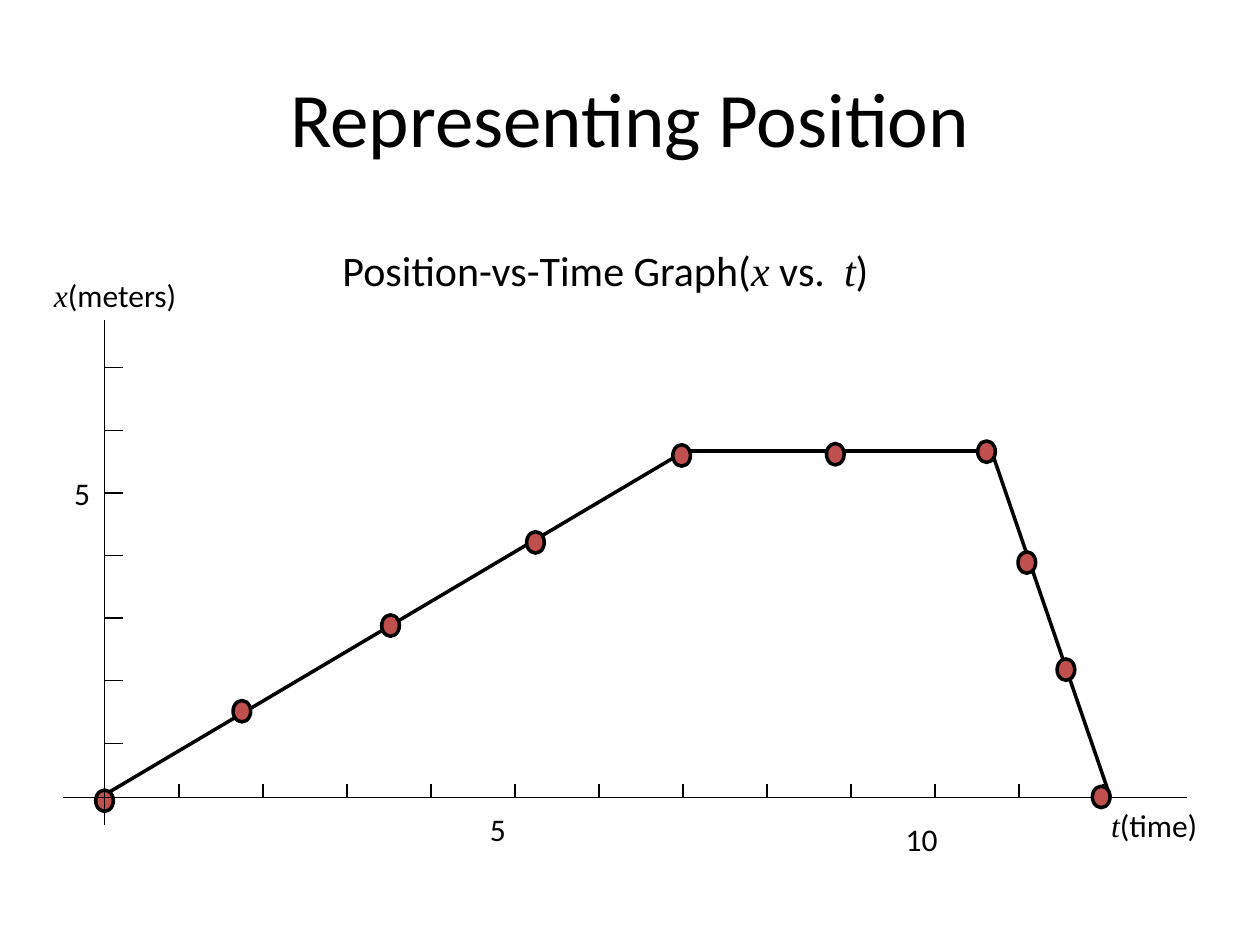
from typing import NamedTuple

from lxml import etree
from pptx import Presentation
from pptx import util as u
from pptx.dml.color import RGBColor
from pptx.enum import shapes, text
from pptx.oxml.ns import qn

COLORS = {"ink": "000000", "marker": "C0504D"}
SANS, SERIF = "Calibri", "Times New Roman"

AXIS_X, AXIS_Y = 0.83, 6.33
TIME_TICKS, TIME_START, TIME_STEP = 12, 1.42, 2 / 3
POSITION_TICKS, POSITION_START, POSITION_STEP = 7, 5.9, 0.497
TIME_TICK_LENGTH, POSITION_TICK_LENGTH = 0.11, 0.15
MARKER_WIDTH, MARKER_HEIGHT = 0.14, 0.17


class Segment(NamedTuple):
    x1: float
    y1: float
    x2: float
    y2: float
    weight: float = 0.75


class Marker(NamedTuple):
    left: float
    top: float


class Label(NamedTuple):
    """Text in pieces; each piece pairs its wording with whether it is a variable."""
    left: float
    top: float
    width: float
    height: float
    pieces: tuple[tuple[str, bool], ...]
    size: float = 18
    wrap: bool = False
    align: text.PP_ALIGN = text.PP_ALIGN.LEFT
    anchor: text.MSO_ANCHOR = text.MSO_ANCHOR.TOP
    space_before: float = 0


MOTION = [
    Segment(8.81, 6.32, 7.89, 3.64, 2),
    Segment(0.76, 6.35, 5.47, 3.56, 2),
    Segment(7.76, 3.58, 5.4, 3.58, 2),
]
AXES = [
    Segment(AXIS_X, 2.54, AXIS_X, 6.55),
    Segment(9.42, AXIS_Y, 0.5, AXIS_Y),
]
MARKERS_BEHIND_AXES = [
    Marker(0.76, 6.27), Marker(1.85, 5.56), Marker(5.34, 3.53), Marker(6.56, 3.52),
]
MARKERS_OVER_AXES = [
    Marker(3.03, 4.88), Marker(4.18, 4.22), Marker(7.76, 3.5),
    Marker(8.67, 6.24), Marker(8.39, 5.23), Marker(8.08, 4.38),
]
LABELS = [
    Label(0.5, 0.3, 9, 1.25, (("Representing Position", False),), 44, True,
          text.PP_ALIGN.CENTER, text.MSO_ANCHOR.MIDDLE),
    Label(2.62, 1.89, 6.5, 0.67,
          (("Position-vs-Time Graph(", False), ("x", True), (" vs.  ", False),
           ("t", True), (")", False)), 24, True, space_before=4.8),
    Label(8.72, 6.35, 0.91, 0.4, (("t", True), ("(time)", False))),
    Label(0.33, 2.14, 1.19, 0.4, (("x", True), ("(meters)", False))),
    Label(3.79, 6.38, 0.33, 0.4, (("5", False),)),
    Label(7.09, 6.46, 0.46, 0.4, (("10", False),)),
    Label(0.49, 3.71, 0.33, 0.4, (("5", False),)),
]


def color(name: str) -> RGBColor:
    return RGBColor.from_string(COLORS[name])


def draw_segment(slide, segment: Segment) -> None:
    ends = [u.Inches(length) for length in segment[:4]]
    line = slide.shapes.add_connector(shapes.MSO_CONNECTOR.STRAIGHT, *ends)
    line.line.color.rgb = color("ink")
    line.line.width = u.Pt(segment.weight)
    etree.SubElement(line._element.spPr, qn("a:effectLst"))


def draw_marker(slide, marker: Marker) -> None:
    dot = slide.shapes.add_shape(
        shapes.MSO_SHAPE.OVAL, u.Inches(marker.left), u.Inches(marker.top),
        u.Inches(MARKER_WIDTH), u.Inches(MARKER_HEIGHT))
    dot.shadow.inherit = False
    dot.fill.solid()
    dot.fill.fore_color.rgb = color("marker")
    dot.line.color.rgb = color("ink")
    dot.line.width = u.Pt(2)


def draw_label(slide, label: Label) -> None:
    frame = slide.shapes.add_textbox(*(u.Inches(n) for n in label[:4])).text_frame
    frame.word_wrap = label.wrap
    frame.vertical_anchor = label.anchor
    if not label.wrap:
        frame.auto_size = text.MSO_AUTO_SIZE.SHAPE_TO_FIT_TEXT
    paragraph = frame.paragraphs[0]
    paragraph.alignment = label.align
    paragraph.space_before = u.Pt(label.space_before)
    for wording, is_variable in label.pieces:
        run = paragraph.add_run()
        run.text = wording
        run.font.name = SERIF if is_variable else SANS
        run.font.italic = is_variable
        run.font.size = u.Pt(label.size)
        run.font.color.rgb = color("ink")


def axis_ticks() -> list[Segment]:
    times = [TIME_START + i * TIME_STEP for i in range(TIME_TICKS)]
    positions = [POSITION_START - i * POSITION_STEP for i in range(POSITION_TICKS)]
    return (
        [Segment(x, AXIS_Y - TIME_TICK_LENGTH, x, AXIS_Y) for x in times]
        + [Segment(AXIS_X + POSITION_TICK_LENGTH, y, AXIS_X, y) for y in positions]
    )


def main() -> None:
    deck = Presentation()
    deck.slide_width, deck.slide_height = u.Inches(10), u.Inches(7.5)
    slide = deck.slides.add_slide(deck.slide_layouts[6])
    for segment in MOTION:
        draw_segment(slide, segment)
    for marker in MARKERS_BEHIND_AXES:
        draw_marker(slide, marker)
    for segment in AXES + axis_ticks():
        draw_segment(slide, segment)
    for marker in MARKERS_OVER_AXES:
        draw_marker(slide, marker)
    for label in LABELS:
        draw_label(slide, label)
    deck.save("out.pptx")


if __name__ == "__main__":
    main()
